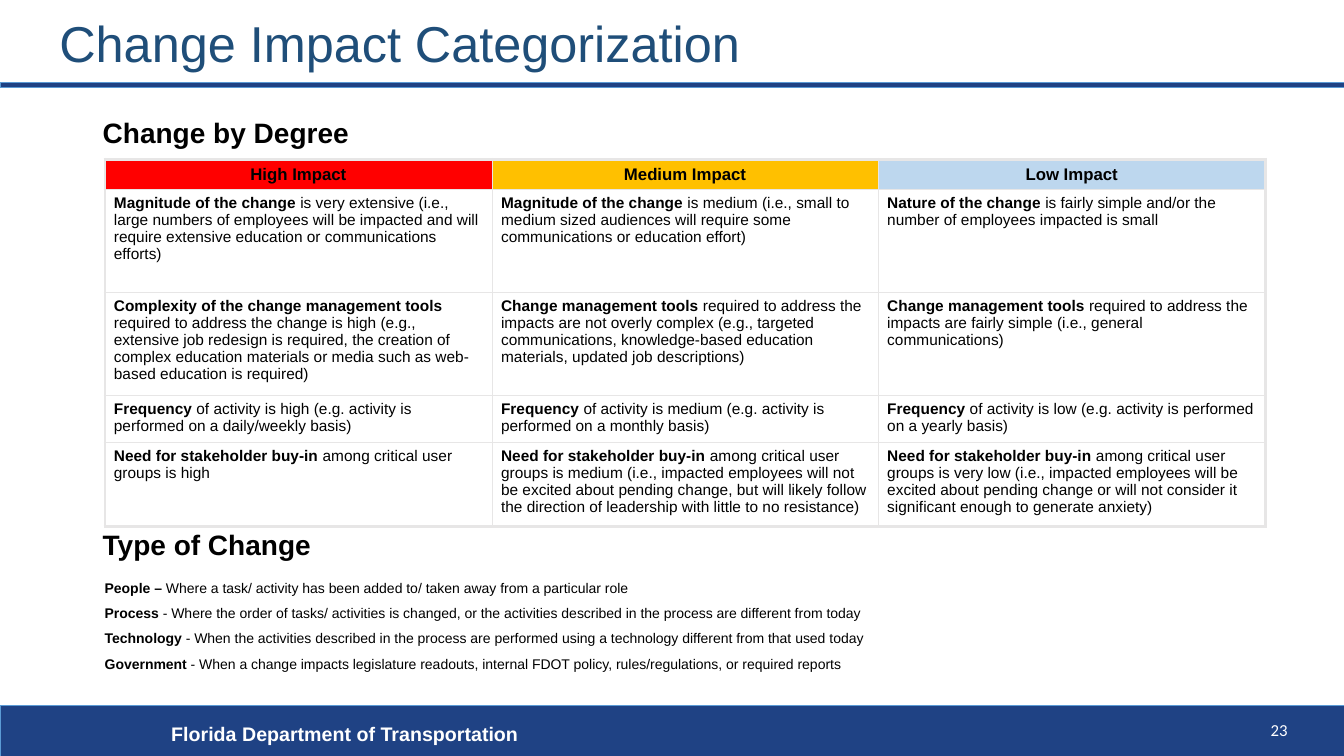
from dataclasses import dataclass

from lxml import etree
from pptx import Presentation
from pptx import util as u
from pptx.dml.color import RGBColor
from pptx.enum import shapes, text
from pptx.oxml.ns import qn


@dataclass(frozen=True)
class Theme:
    navy: str = "1F4284"
    edge: str = "5B9BD5"
    title: str = "1F4E79"
    ink: str = "000000"
    white: str = "FFFFFF"
    grid: str = "E7E6E6"
    heads: tuple = ("FF0000", "FFC000", "BDD7EE")
    font: str = "Arial"
    num_font: str = "Calibri"
    title_pt: int = 36
    head_pt: int = 20
    foot_pt: int = 14
    label_pt: int = 12
    cell_pt: int = 11
    note_pt: int = 10
    thick: float = 2.25
    thin: float = 0.25


T = Theme()
ALIGN = text.PP_ALIGN
ANCHOR = text.MSO_ANCHOR

COLS = (3.84, 3.83, 3.84)
ROWS = (0.3, 1.02, 1.02, 0.47, 0.82)
HEADS = ("High Impact", "Medium Impact", "Low Impact")
# Each cell holds a bold lead and the plain rest
CELLS = (
    (("Magnitude of the change", " is very extensive (i.e., large numbers of employees will be "
      "impacted and will require extensive education or communications efforts)"),
     ("Magnitude of the change", " is medium (i.e., small to medium sized audiences will "
      "require some communications or education effort)"),
     ("Nature of the change", " is fairly simple and/or the number of employees impacted is small")),
    (("Complexity of the change management tools", " required to address the change is high "
      "(e.g., extensive job redesign is required, the creation of complex education materials "
      "or media such as web-based education is required)"),
     ("Change management tools", " required to address the impacts are not overly complex (e.g., "
      "targeted communications, knowledge-based education materials, updated job descriptions)"),
     ("Change management tools", " required to address the impacts are fairly simple "
      "(i.e., general communications)")),
    (("Frequency", " of activity is high (e.g. activity is performed on a daily/weekly basis)"),
     ("Frequency", " of activity is medium (e.g. activity is performed on a monthly basis)"),
     ("Frequency", " of activity is low (e.g. activity is performed on a yearly basis)")),
    (("Need for stakeholder buy-in", " among critical user groups is high"),
     ("Need for stakeholder buy-in", " among critical user groups is medium (i.e., impacted "
      "employees will not be excited about pending change, but will likely follow the direction "
      "of leadership with little to no resistance)"),
     ("Need for stakeholder buy-in", " among critical user groups is very low (i.e., impacted "
      "employees will be excited about pending change or will not consider it significant "
      "enough to generate anxiety)")),
)
TYPES = (
    ("People –", " Where a task/ activity has been added to/ taken away from a particular role"),
    ("Process", " - Where the order of tasks/ activities is changed, or the activities "
     "described in the process are different from today"),
    ("Technology", " - When the activities described in the process are performed using a "
     "technology different from that used today"),
    ("Government", " - When a change impacts legislature readouts, internal FDOT policy, "
     "rules/regulations, or required reports"),
)


def write(frame, paras, size, color=T.ink, font=T.font, align=ALIGN.LEFT, gap=0, lines=None):
    """Fill a frame with paragraphs, each a list of (words, bold) runs."""
    frame.word_wrap = True
    for i, runs in enumerate(paras):
        para = frame.paragraphs[0] if i == 0 else frame.add_paragraph()
        para.alignment = align
        if i and gap:
            para.space_before = u.Pt(gap)
        if lines:
            para.line_spacing = lines
        for words, bold in runs:
            run = para.add_run()
            run.text = words
            run.font.name, run.font.size, run.font.bold = font, u.Pt(size), bold
            run.font.color.rgb = RGBColor.from_string(color)


def place(slide, box, paras, size, anchor=ANCHOR.TOP, **form):
    frame = slide.shapes.add_textbox(*map(u.Inches, box)).text_frame
    frame.vertical_anchor = anchor
    write(frame, paras, size, **form)


def lead(pair):
    return [(pair[0], True), (pair[1], False)]


def bar(slide, box):
    rect = slide.shapes.add_shape(shapes.MSO_SHAPE.RECTANGLE, *map(u.Inches, box))
    rect.shadow.inherit = False
    rect.fill.solid()
    rect.fill.fore_color.rgb = RGBColor.from_string(T.navy)
    rect.line.color.rgb = RGBColor.from_string(T.edge)
    rect.line.width = u.Pt(0.5)


def rule(cell, outer):
    """Draw the four cell borders, thick on the outer sides."""
    props = cell._tc.get_or_add_tcPr()
    for i, side in enumerate("LRTB"):
        width = u.Pt(T.thick if side in outer else T.thin)
        line = etree.Element(qn("a:ln" + side), w=str(int(width)))
        fill = etree.SubElement(line, qn("a:solidFill"))
        etree.SubElement(fill, qn("a:srgbClr"), val=T.grid)
        props.insert(i, line)


def header(slide, box):
    x, y, w, h = box
    place(slide, (x + 0.49, y + 0.1, 11.5, h - 0.15), [[("Change Impact Categorization", False)]],
          T.title_pt, anchor=ANCHOR.MIDDLE, color=T.title, lines=0.9)
    bar(slide, (x, y + h - 0.05, w, 0.05))


def heading(slide, box, words):
    place(slide, box, [[(words, True)]], T.head_pt)


def degrees(slide, box):
    x, y, w, h = box
    heading(slide, (x, y, 7.36, 0.4), "Change by Degree")
    grid = slide.shapes.add_table(len(ROWS), len(COLS), *map(
        u.Inches, (x + 0.12, y + 0.48, sum(COLS), sum(ROWS)))).table
    grid.horz_banding = False
    for col, width in zip(grid.columns, COLS):
        col.width = u.Inches(width)
    for row, height in zip(grid.rows, ROWS):
        row.height = u.Inches(height)
    for r in range(len(ROWS)):
        for c in range(len(COLS)):
            cell = grid.cell(r, c)
            cell.margin_left = cell.margin_right = u.Inches(0.09)
            cell.fill.solid()
            cell.fill.fore_color.rgb = RGBColor.from_string(T.white if r else T.heads[c])
            if r:
                write(cell.text_frame, [lead(CELLS[r - 1][c])], T.cell_pt)
            else:
                cell.vertical_anchor = ANCHOR.MIDDLE
                write(cell.text_frame, [[(HEADS[c], True)]], T.label_pt, align=ALIGN.CENTER)
            sides = (("L", c == 0), ("R", c == len(COLS) - 1),
                     ("T", r == 0), ("B", r == len(ROWS) - 1))
            rule(cell, [side for side, edge in sides if edge])


def kinds(slide, box):
    x, y, w, h = box
    heading(slide, (x, y, 7.36, 0.4), "Type of Change")
    place(slide, (x + 0.02, y + 0.52, w, h - 0.52), [lead(pair) for pair in TYPES],
          T.note_pt, gap=6)


def footer(slide, box):
    x, y, w, h = box
    bar(slide, box)
    place(slide, (x + 1.6, y + 0.11, 7.98, 0.34),
          [[("Florida Department of Transportation", True)]], T.foot_pt, color=T.white)
    place(slide, (x + 11.74, y + 0.09, 1.13, 0.3), [[("23", False)]], T.label_pt,
          color=T.white, font=T.num_font, align=ALIGN.RIGHT)


def main():
    deck = Presentation()
    deck.slide_width, deck.slide_height = u.Inches(13.33), u.Inches(7.5)
    slide = deck.slides.add_slide(deck.slide_layouts[6])
    header(slide, (0, 0, 13.33, 0.87))
    degrees(slide, (0.92, 1.1, 11.63, 4.11))
    kinds(slide, (0.92, 5.18, 9.4, 1.55))
    footer(slide, (0, 7, 13.33, 0.5))
    deck.save("out.pptx")


if __name__ == "__main__":
    main()
